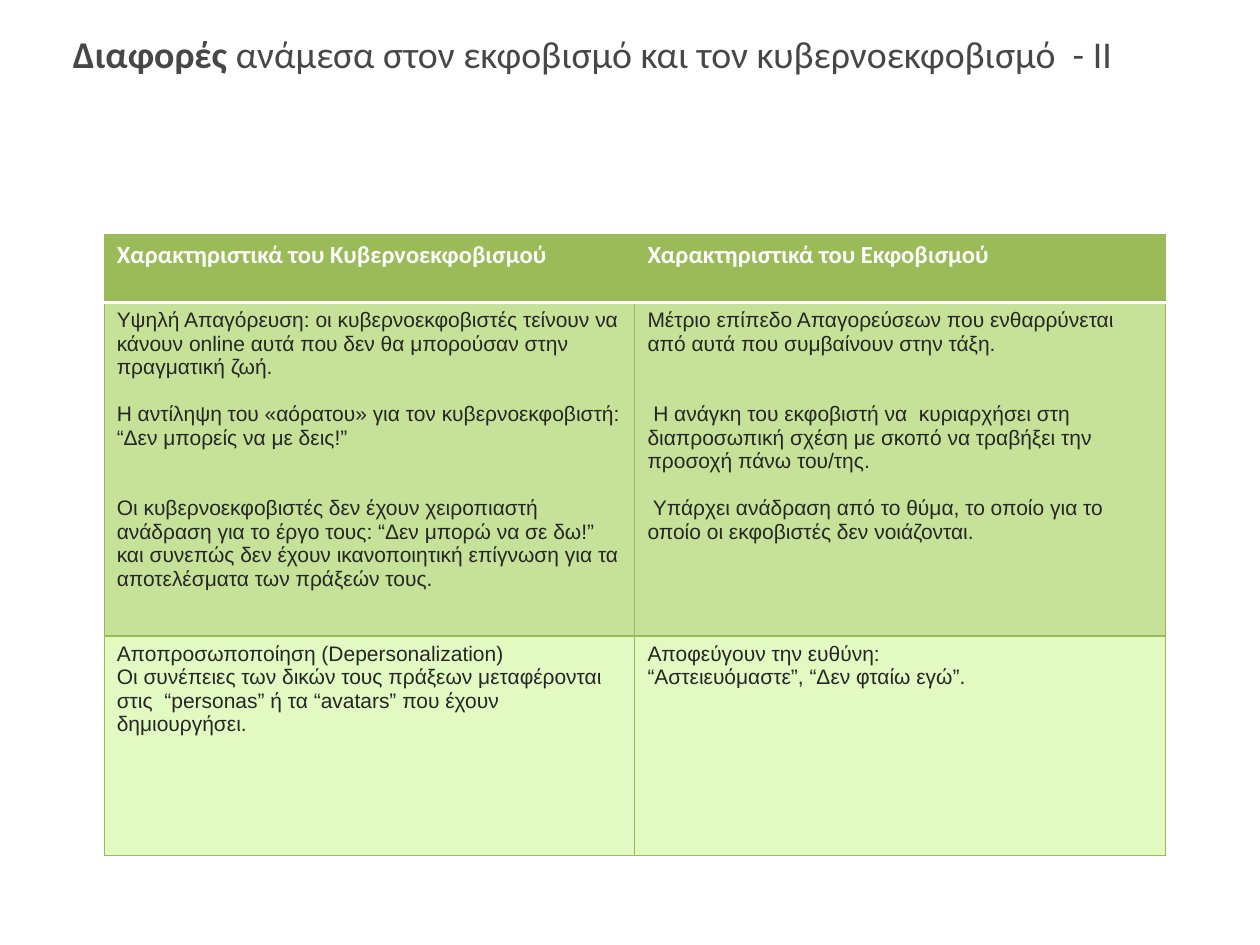
"""Build a slide comparing cyberbullying with bullying in a two-column table."""
from lxml.etree import SubElement
from pptx import Presentation
from pptx.dml.color import RGBColor as RGB
from pptx.enum.text import MSO_ANCHOR as Anchor
from pptx.oxml.ns import qn
from pptx.util import Cm, Pt

TITLE = [
    ("Διαφορές ", True),
    ("ανάμεσα στον εκφοβισμό και τον κυβερνοεκφοβισμό  - II", False),
]
HEADERS = ["Χαρακτηριστικά του Κυβερνοεκφοβισμού", "Χαρακτηριστικά του Εκφοβισμού"]
# each paragraph: text, lines of space before it
BODY = [
    [
        [
            ("Υψηλή Απαγόρευση: οι κυβερνοεκφοβιστές τείνουν να κάνουν online αυτά "
             "που δεν θα μπορούσαν στην πραγματική ζωή.", 0),
            ("Η αντίληψη του «αόρατου» για τον κυβερνοεκφοβιστή: "
             "“Δεν μπορείς να με δεις!”", 1),
            ("Οι κυβερνοεκφοβιστές δεν έχουν χειροπιαστή ανάδραση για το έργο τους: "
             "“Δεν μπορώ να σε δω!” και συνεπώς δεν έχουν ικανοποιητική επίγνωση "
             "για τα αποτελέσματα των πράξεών τους.", 2),
        ],
        [
            ("Μέτριο επίπεδο Απαγορεύσεων που ενθαρρύνεται από αυτά που συμβαίνουν "
             "στην τάξη.", 0),
            (" Η ανάγκη του εκφοβιστή να  κυριαρχήσει στη διαπροσωπική σχέση με σκοπό "
             "να τραβήξει την προσοχή πάνω του/της.", 2),
            (" Υπάρχει ανάδραση από το θύμα, το οποίο για το οποίο οι εκφοβιστές "
             "δεν νοιάζονται.", 1),
        ],
    ],
    [
        [
            ("Αποπροσωποποίηση (Depersonalization)", 0),
            ("Οι συνέπειες των δικών τους πράξεων μεταφέρονται στις  “personas” ή τα "
             "“avatars” που έχουν δημιουργήσει.", 0),
        ],
        [
            ("Αποφεύγουν την ευθύνη:", 0),
            ("“Αστειευόμαστε”, “Δεν φταίω εγώ”.", 0),
        ],
    ],
]
THEME = {
    "title": ("Calibri", 21.6, "474747"),
    "header": ("Calibri", 14, "FFFFFF"),
    "body": ("Arial", 12, "262626"),
    "fills": ["9BBB59", "C6E298", "E2FAC2"],
    "border": ("98B955", 0.75),
    "rule": ("FFFFFF", 2),
    "line_gap": 13.5,
}
COL_WIDTH = 10.7
ROW_HEIGHTS = [1.37, 6.73, 4.42]


def add_run(p, text, style, bold=False):
    """Add one styled run to a paragraph."""
    name, size, color = THEME[style]
    r = p.add_run()
    r.text = text
    r.font.name, r.font.size, r.font.bold = name, Pt(size), bold
    r.font.color.rgb = RGB.from_string(color)


def set_borders(cell, row):
    """Outline a cell, with a white rule below the header row."""
    edges = dict.fromkeys(("L", "R", "T", "B"), "border")
    if row == 0:
        edges["B"] = "rule"
    elif row == 1:
        edges["T"] = "rule"
    for edge, kind in edges.items():
        color, width = THEME[kind]
        ln = SubElement(cell._tc.get_or_add_tcPr(), qn(f"a:ln{edge}"), w=str(Pt(width)))
        SubElement(SubElement(ln, qn("a:solidFill")), qn("a:srgbClr"), val=color)


def add_title(s):
    """Add the slide title."""
    tf = s.shapes.add_textbox(Cm(1.22), Cm(0.61), Cm(23.34), Cm(1.42)).text_frame
    tf.word_wrap = True
    tf.vertical_anchor = Anchor.TOP
    tf.margin_top = tf.margin_bottom = 0
    for text, bold in TITLE:
        add_run(tf.paragraphs[0], text, "title", bold)


def add_comparison(s):
    """Add the comparison table."""
    rows = [[[(text, 0)] for text in HEADERS]] + BODY
    table = s.shapes.add_table(
        len(rows), len(HEADERS), Cm(2.1), Cm(4.72),
        Cm(COL_WIDTH * len(HEADERS)), Cm(sum(ROW_HEIGHTS)),
    ).table
    for col in table.columns:
        col.width = Cm(COL_WIDTH)
    for i, cells in enumerate(rows):
        table.rows[i].height = Cm(ROW_HEIGHTS[i])
        for j, paragraphs in enumerate(cells):
            cell = table.cell(i, j)
            set_borders(cell, i)
            cell.fill.solid()
            cell.fill.fore_color.rgb = RGB.from_string(THEME["fills"][i])
            tf = cell.text_frame
            for k, (text, gap) in enumerate(paragraphs):
                p = tf.add_paragraph() if k else tf.paragraphs[0]
                if gap:
                    p.space_before = Pt(gap * THEME["line_gap"])
                add_run(p, text, "body" if i else "header", i == 0)


def main():
    """Build and save the slide."""
    prs = Presentation()
    prs.slide_width, prs.slide_height = Cm(25.4), Cm(19.05)
    s = prs.slides.add_slide(prs.slide_layouts[6])
    add_title(s)
    add_comparison(s)
    prs.save("out.pptx")


if __name__ == "__main__":
    main()
